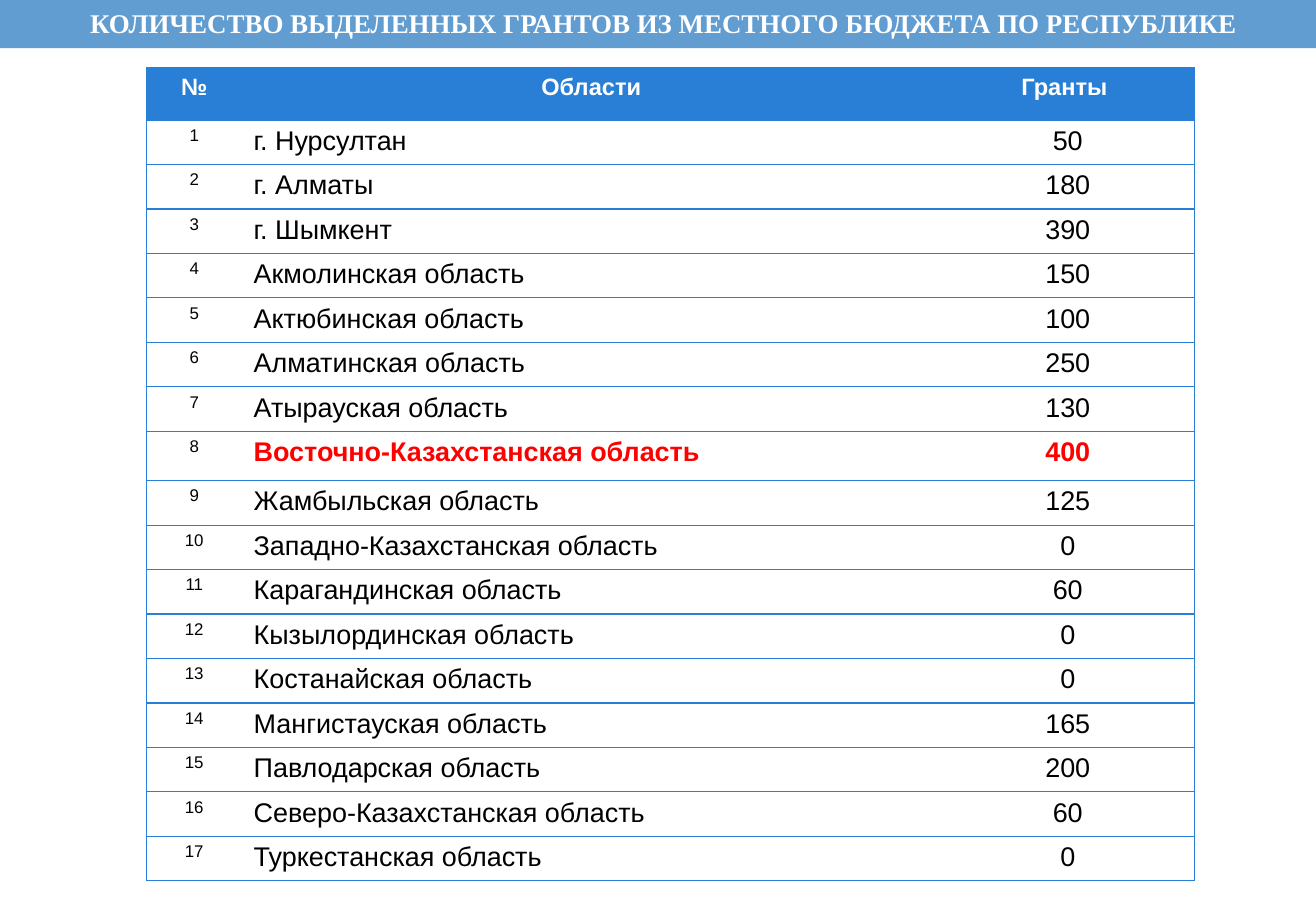
from lxml import etree
from pptx import Presentation
from pptx.dml.color import RGBColor
from pptx.enum.shapes import MSO_SHAPE
from pptx.enum.text import MSO_ANCHOR, MSO_AUTO_SIZE, PP_ALIGN
from pptx.oxml.ns import qn
from pptx.util import Cm, Pt

RECTANGLE = MSO_SHAPE.RECTANGLE
MIDDLE = MSO_ANCHOR.MIDDLE
NO_AUTOFIT = MSO_AUTO_SIZE.NONE
LEFT, CENTER = PP_ALIGN.LEFT, PP_ALIGN.CENTER

TITLE_ONLY = 5
BAR_BLUE, TABLE_BLUE = "629DD1", "297FD5"
WHITE, BLACK, RED = "FFFFFF", "000000", "FF0000"

TITLE = "КОЛИЧЕСТВО ВЫДЕЛЕННЫХ ГРАНТОВ ИЗ МЕСТНОГО БЮДЖЕТА ПО РЕСПУБЛИКЕ"
HEADERS = ("№", "Области", "Гранты ")
GRANTS = (
    ("г. Нурсултан", 50),
    ("г. Алматы", 180),
    ("г. Шымкент", 390),
    ("Акмолинская область", 150),
    ("Актюбинская область", 100),
    ("Алматинская область", 250),
    ("Атырауская область", 130),
    ("Восточно-Казахстанская область", 400),
    ("Жамбыльская область", 125),
    ("Западно-Казахстанская область", 0),
    ("Карагандинская область", 60),
    ("Кызылординская область", 0),
    ("Костанайская область", 0),
    ("Мангистауская область", 165),
    ("Павлодарская область", 200),
    ("Северо-Казахстанская область", 60),
    ("Туркестанская область", 0),
)
HIGHLIGHTED_REGION = "Восточно-Казахстанская область"

COLUMN_WIDTHS = (1.98, 14.62, 5.3)
ALIGNMENTS = (CENTER, LEFT, CENTER)
BODY_SIZES = (10, 16, 16)
HEADER_HEIGHT, ROW_HEIGHT, HIGHLIGHTED_HEIGHT = 1.09, 0.93, 1.03


def color(value):
    return RGBColor.from_string(value)


def write_text(text_frame, text, font_name, size, text_color, bold, alignment):
    text_frame.text = text
    paragraph = text_frame.paragraphs[0]
    paragraph.alignment = alignment
    font = paragraph.runs[0].font
    font.name = font_name
    font.size = Pt(size)
    font.bold = bold
    font.color.rgb = color(text_color)


def add_title_bar(slide, width):
    bar = slide.shapes.add_shape(RECTANGLE, 0, 0, width, Cm(1.01))
    bar.shadow.inherit = False
    bar.fill.solid()
    bar.fill.fore_color.rgb = color(BAR_BLUE)
    bar.line.fill.background()

    # The title lies on top of the bar
    title = slide.shapes.title
    title.element.addprevious(bar.element)
    title.left, title.top, title.width, title.height = Cm(1.63), 0, Cm(25.4), Cm(0.94)
    text_frame = title.text_frame
    text_frame.word_wrap = True
    text_frame.auto_size = NO_AUTOFIT
    text_frame.vertical_anchor = MIDDLE
    write_text(text_frame, TITLE, "Times New Roman", 16, WHITE, True, LEFT)


def set_borders(cell, visible_sides):
    properties = cell._tc.get_or_add_tcPr()
    for side in "LRTB":
        line = etree.SubElement(properties, qn(f"a:ln{side}"), w=str(Pt(0.75)))
        if side in visible_sides:
            fill = etree.SubElement(line, qn("a:solidFill"))
            etree.SubElement(fill, qn("a:srgbClr"), val=TABLE_BLUE)
        else:
            etree.SubElement(line, qn("a:noFill"))


def fill_row(table, row_index, values, sizes, colors, bold_flags):
    for column, value in enumerate(values):
        cell = table.cell(row_index, column)
        alignment = ALIGNMENTS[column] if row_index else CENTER
        write_text(cell.text_frame, str(value), "Arial", sizes[column],
                   colors[column], bold_flags[column], alignment)
        set_borders(cell, ("LTB", "TB", "RTB")[column])
        if row_index:
            cell.fill.background()
        else:
            cell.fill.solid()
            cell.fill.fore_color.rgb = color(TABLE_BLUE)


def add_grants_table(slide):
    frame = slide.shapes.add_table(len(GRANTS) + 1, len(HEADERS),
                                   Cm(3.07), Cm(1.42), Cm(21.9), Cm(17))
    table = frame.table
    table.horz_banding = False
    for column, width in zip(table.columns, COLUMN_WIDTHS):
        column.width = Cm(width)

    # Header row
    table.rows[0].height = Cm(HEADER_HEIGHT)
    fill_row(table, 0, HEADERS, (14,) * 3, (WHITE,) * 3, (True,) * 3)

    # Numbered regions
    for number, (region, grants) in enumerate(GRANTS, start=1):
        highlighted = region == HIGHLIGHTED_REGION
        accent = RED if highlighted else BLACK
        height = HIGHLIGHTED_HEIGHT if highlighted else ROW_HEIGHT
        table.rows[number].height = Cm(height)
        fill_row(table, number, (number, region, grants), BODY_SIZES,
                 (BLACK, accent, accent), (False, highlighted, highlighted))


def main():
    presentation = Presentation()
    presentation.slide_width = Cm(27.51)
    presentation.slide_height = Cm(19.05)
    slide = presentation.slides.add_slide(presentation.slide_layouts[TITLE_ONLY])
    add_title_bar(slide, presentation.slide_width)
    add_grants_table(slide)
    presentation.save("out.pptx")


if __name__ == "__main__":
    main()
